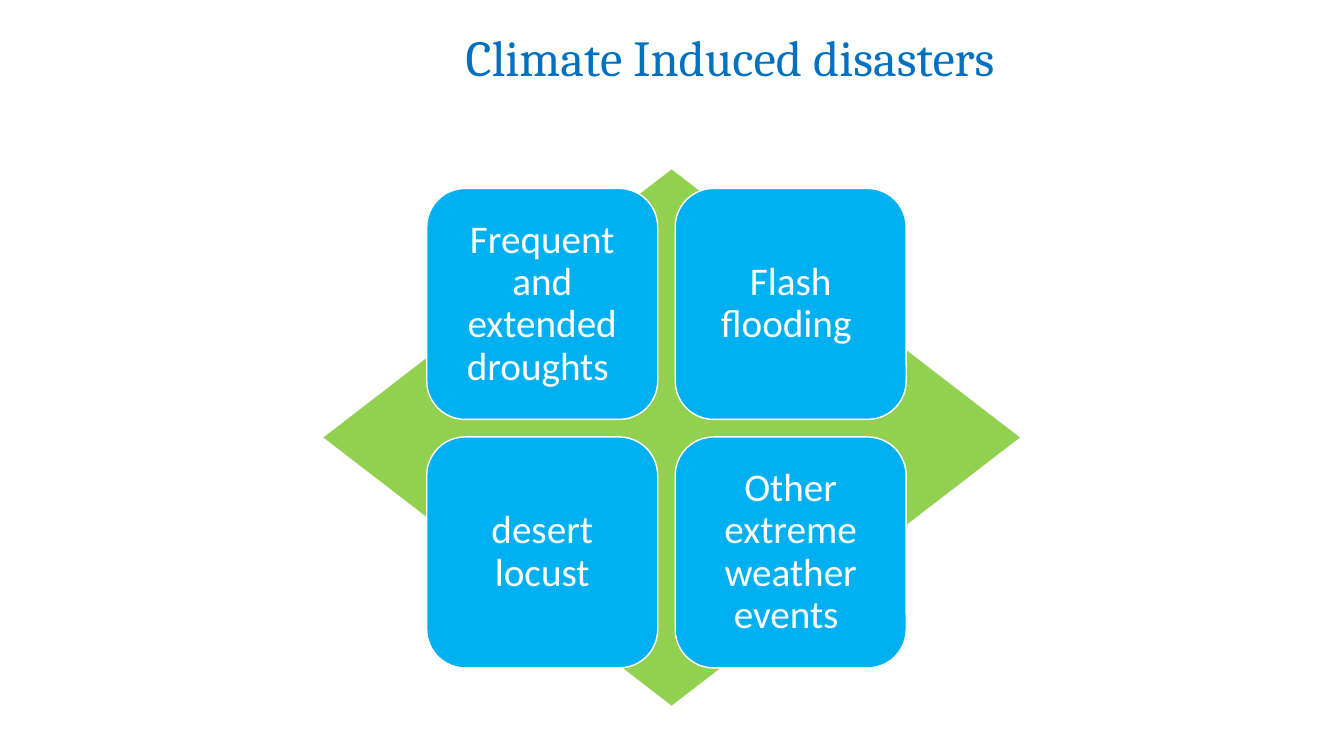
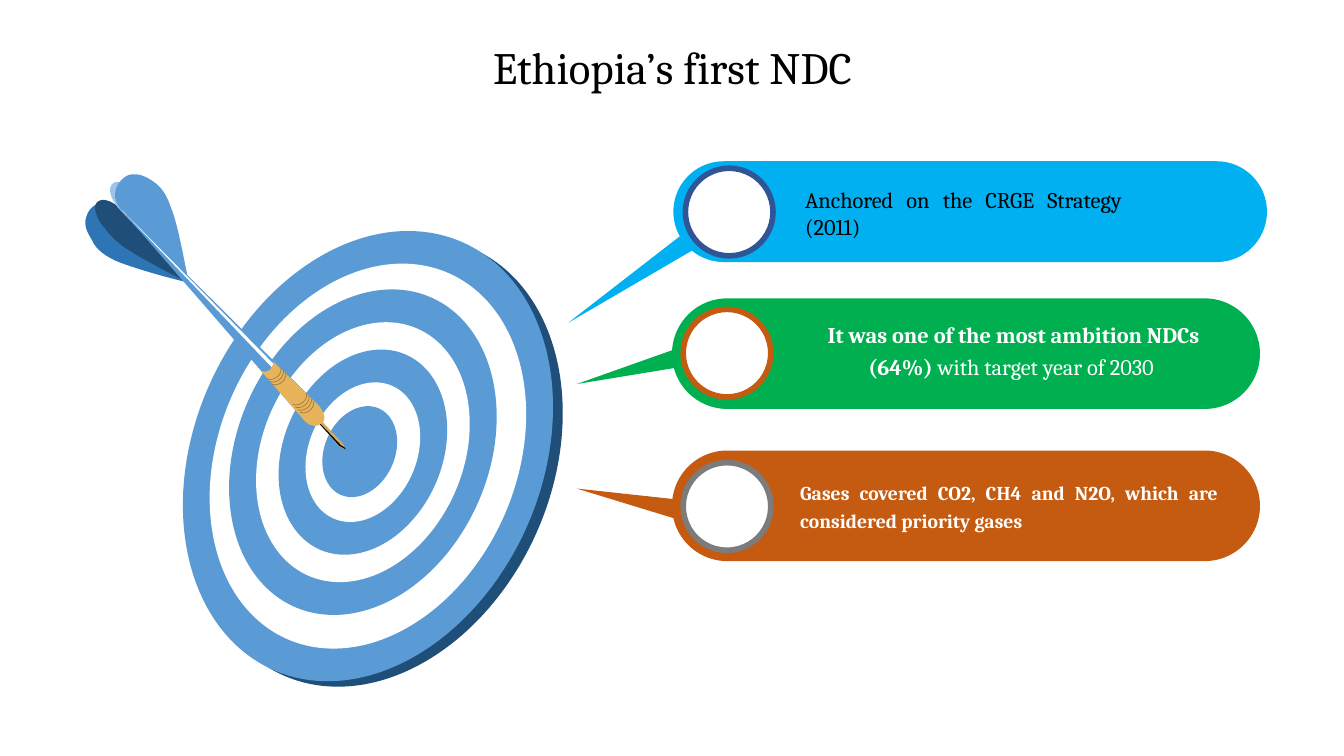
from pptx import Presentation
from pptx.dml.color import RGBColor
from pptx.enum.shapes import MSO_SHAPE
from pptx.enum.text import MSO_ANCHOR, MSO_AUTO_SIZE, PP_ALIGN
from pptx.util import Pt

DIAMOND, OVAL, ROUND = MSO_SHAPE.DIAMOND, MSO_SHAPE.OVAL, MSO_SHAPE.ROUNDED_RECTANGLE
TOP, MIDDLE = MSO_ANCHOR.TOP, MSO_ANCHOR.MIDDLE
CENTER, JUSTIFY = PP_ALIGN.CENTER, PP_ALIGN.JUSTIFY
FIXED = MSO_AUTO_SIZE.NONE

WHITE = RGBColor(0xFF, 0xFF, 0xFF)
BLACK = RGBColor(0x00, 0x00, 0x00)
TITLE = RGBColor(0x00, 0x70, 0xC0)
LIME = RGBColor(0x92, 0xD0, 0x50)
SKY = RGBColor(0x00, 0xB0, 0xF0)
GREEN = RGBColor(0x00, 0xB0, 0x50)
RUST = RGBColor(0xC5, 0x5A, 0x11)
INDIGO = RGBColor(0x2F, 0x55, 0x97)
GRAY = RGBColor(0x7C, 0x7C, 0x7C)
NAVY = RGBColor(0x1F, 0x4E, 0x79)
COBALT = RGBColor(0x2E, 0x75, 0xB6)
BLUE = RGBColor(0x5B, 0x9B, 0xD5)
PALE = RGBColor(0x9D, 0xC3, 0xE6)
GOLD = RGBColor(0xE7, 0xB4, 0x5B)
BRASS = RGBColor(0xD9, 0xA9, 0x55)
BROWN = RGBColor(0x9E, 0x79, 0x3E)
SERIF, SANS = "Cambria", "Calibri"


def write(frame, text, rest="", font=SERIF, size=16, color=WHITE, bold=False,
          align=CENTER, anchor=MIDDLE, inset=(7.2, 3.6), lead=None, before=0, wrap=True):
    """Fill a text frame; rest follows the text in regular weight."""
    frame.auto_size, frame.word_wrap = FIXED, wrap
    frame.vertical_anchor = anchor
    frame.margin_left = frame.margin_right = Pt(inset[0])
    frame.margin_top = frame.margin_bottom = Pt(inset[1])
    para = frame.paragraphs[0]
    para.alignment, para.space_before = align, Pt(before)
    if lead:
        para.line_spacing = lead
    for part, heavy in ((text, bold), (rest, False)):
        if part:
            run = para.add_run()
            run.text = part
            run.font.name, run.font.size = font, Pt(size)
            run.font.bold, run.font.color.rgb = heavy, color


def trace(start, steps, count=12):
    """Turn line steps (x, y) and cubic steps (six numbers) into points."""
    points = [start]
    for step in steps:
        if len(step) == 2:
            points.append(step)
            continue
        knots = [points[-1], step[:2], step[2:4], step[4:]]
        for i in range(1, count + 1):
            t = i / count
            mix = ((1 - t) ** 3, 3 * t * (1 - t) ** 2, 3 * t * t * (1 - t), t ** 3)
            points.append(tuple(sum(m * k[axis] for m, k in zip(mix, knots))
                                for axis in (0, 1)))
    return points


class Deck:
    def __init__(self):
        self.prs = Presentation()
        self.prs.slide_width, self.prs.slide_height = Pt(960), Pt(540)
        self.page = None

    def start(self, text, box, **style):
        self.page = self.prs.slides.add_slide(self.prs.slide_layouts[5])
        title = self.page.shapes.title
        title.left, title.top, title.width, title.height = map(Pt, box)
        write(title.text_frame, text, **style)

    def paint(self, shape, fill, line, weight):
        shape.shadow.inherit = False
        if fill is None:
            shape.fill.background()
        else:
            shape.fill.solid()
            shape.fill.fore_color.rgb = fill
        if line is None:
            shape.line.fill.background()
        else:
            shape.line.color.rgb, shape.line.width = line, Pt(weight)
        return shape

    def shape(self, kind, box, fill, line=None, weight=1):
        shape = self.page.shapes.add_shape(kind, *map(Pt, box))
        return self.paint(shape, fill, line, weight)

    def disc(self, x, y, rx, ry, fill, turn):
        self.shape(OVAL, (x - rx, y - ry, 2 * rx, 2 * ry), fill).rotation = turn

    def free(self, start, steps, fill=None, line=None, weight=1):
        points = [(Pt(x), Pt(y)) for x, y in trace(start, steps)]
        pen = self.page.shapes.build_freeform(*points[0])
        pen.add_line_segments(points[1:], close=fill is not None)
        return self.paint(pen.convert_to_shape(), fill, line, weight)

    def text(self, box, text, **style):
        frame = self.page.shapes.add_textbox(*map(Pt, box)).text_frame
        write(frame, text, **style)


def risks(deck):
    deck.start("Climate Induced disasters", (221, 15, 601, 51), size=36, color=TITLE)
    deck.shape(DIAMOND, (231, 121, 497.5, 383), LIME)
    names = ("Frequent and extended droughts ", "Flash flooding ",
             "desert locust", "Other extreme weather events ")
    for i, name in enumerate(names):
        row, col = divmod(i, 2)
        tile = deck.shape(ROUND, (304.8 + 177.5 * col, 134.6 + 177.5 * row, 165, 165),
                          SKY, WHITE)
        write(tile.text_frame, name, font=SANS, size=28, inset=(8, 8), lead=0.9)


def target(deck):
    # Rim, then rings from the outside in
    tilt, ratio = 23.9, 1.345
    deck.disc(270, 330, 124, 124 * ratio, NAVY, tilt)
    rings = ((262.8, 325.8, 124.2), (262.8, 325.8, 106.2), (259.2, 323, 89.8),
             (259.2, 323, 71.7), (259.2, 323, 56.6), (259.2, 323, 38.5),
             (257, 322.6, 25.1))
    for i, (x, y, r) in enumerate(rings):
        deck.disc(x, y, r, r * ratio, WHITE if i % 2 else BLUE, tilt)


def dart(deck):
    # Point
    deck.free((243, 319), [(247, 321), (245, 317), (224, 294.5), (222, 296)], BRASS)
    deck.free((222.5, 296), [(243.5, 318), (246, 319.5), (247, 321),
                             (242.5, 318.5), (222, 296)], BLACK)
    # Feathers, all meeting at the same end
    end = (135, 202)
    feathers = (
        (COBALT, (86, 149), [(75, 139, 64, 147, 62, 154), (59, 161, 63, 167, 66, 172),
                             (69, 179, 76, 183, 82, 186), (93, 191, 122, 199, *end)]),
        (NAVY, (86, 149), [(75, 139, 68, 143, 68, 148), (68, 153, 71, 159, 75, 163),
                           (79, 169, 85, 174, 91, 178), (100, 184, 124, 197, *end)]),
        (PALE, (84, 148), [(75, 136, 79, 130, 84, 130), (89, 130, 95, 134, 99, 138),
                           (105, 143, 109, 149, 113, 155), (119, 165, 130, 191, *end)]),
        (BLUE, (86, 149), [(77, 138, 86, 127, 92, 125), (99, 123, 106, 127, 110, 130),
                           (117, 135, 120, 142, 122, 148), (127, 159, 132, 189, *end)]))
    for color, start, steps in feathers:
        deck.free(start, steps, color)
    # Shaft and barrel
    deck.free((217, 300), [(228, 290), (85, 148)], BLUE)
    deck.free((87, 150), [(228, 293), (230, 300)], WHITE)
    deck.free((193, 264), [(194, 262, 196, 260, 195, 258), (227.5, 289.5),
                           (232, 295, 233, 300, 230, 302), (227, 305, 222, 305, 218, 301),
                           (186.5, 265), (189, 266, 192, 265, 193, 264)], GOLD)
    # Grip lines
    for x, y, count in ((224, 286.5, 4), (204, 266.4, 3)):
        for i in range(count):
            a, b = x - 1.7 * i, y - 1.9 * i
            deck.free((a, b), [(a + 1.2, b + 5, a - 5, b + 10, a - 9.7, b + 8)],
                      line=BROWN, weight=0.5)


def goals(deck):
    deck.start("Ethiopia’s first NDC", (327, 24.5, 307, 46), size=32, color=BLACK,
               wrap=False)
    target(deck)
    dart(deck)

    # Callouts: body, tail and badge
    calls = (
        (SKY, INDIGO, (481, 115.2, 424, 72), [(406, 230.5), (486, 168.5), (495, 178.6)],
         (489.6, 120.2)),
        (GREEN, RUST, (480, 213.1, 420, 79), [(412, 274.3), (482, 249.5), (484, 262.5)],
         (488, 221)),
        (RUST, GRAY, (480, 321.8, 420, 79), [(412, 349), (482, 356.6), (484, 371)],
         (488, 330.5)))
    for color, rim, box, tail, spot in calls:
        deck.free(tail[0], tail[1:], color)
        deck.shape(ROUND, box, color).adjustments[0] = 0.5
        deck.shape(OVAL, (*spot, 62.6, 62.6), WHITE, rim, 4)

    # Callout texts
    deck.text((568, 129, 240.5, 46), "Anchored on the CRGE Strategy (2011)",
              color=BLACK, align=JUSTIFY)
    loose = dict(bold=True, anchor=TOP, inset=(8.64, 4.32), lead=1.2)
    deck.text((568, 221, 312, 81), "It was one of the most ambition NDCs (64%)",
              rest=" with target year of 2030 ", before=3.2, **loose)
    deck.text((563, 335.5, 316, 48),
              "Gases covered CO2, CH4 and N2O, which are considered priority gases",
              size=14, align=JUSTIFY, before=2.8, **loose)


def main():
    deck = Deck()
    risks(deck)
    goals(deck)
    deck.prs.save("out.pptx")


if __name__ == "__main__":
    main()
